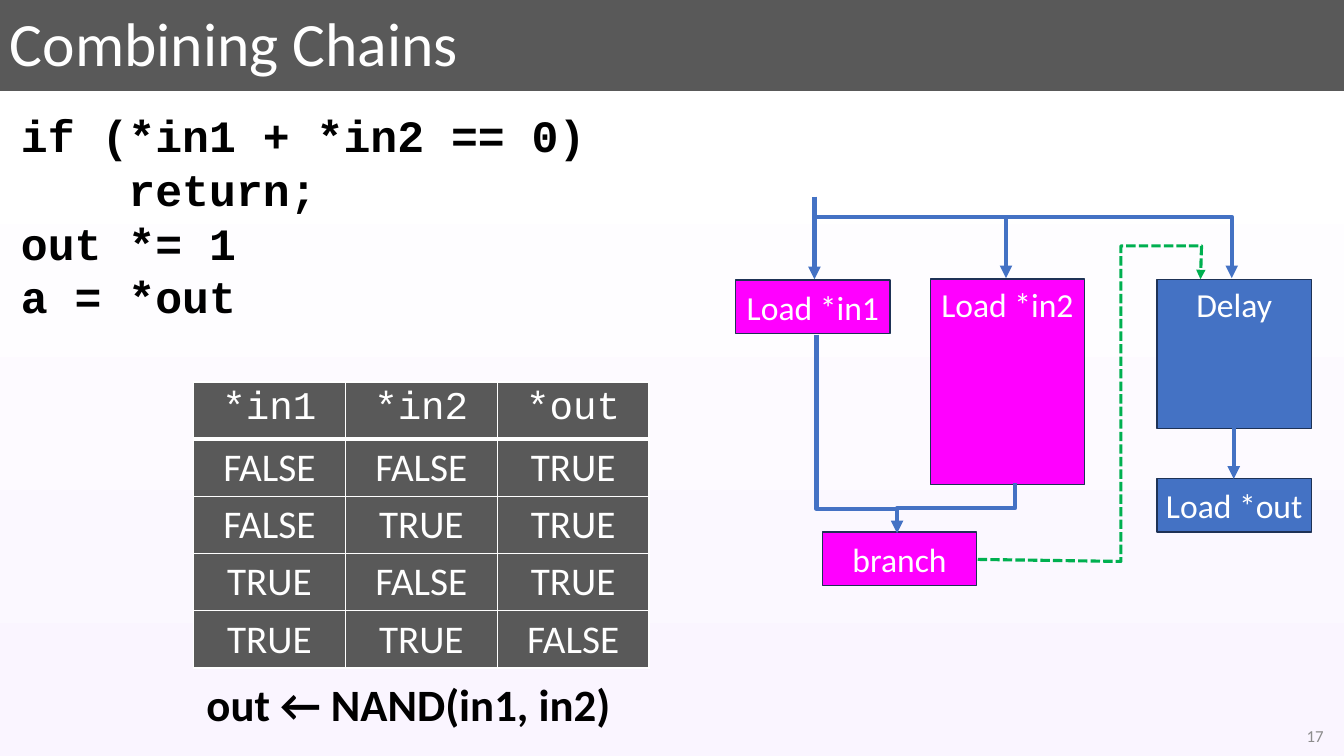
"""Build the "Combining Chains" slide on a grid of 40 columns by 22.5 rows."""
from dataclasses import dataclass

import lxml.etree
import pptx
import pptx.util
import pptx.dml.color
import pptx.enum.dml
import pptx.enum.shapes
import pptx.enum.text
import pptx.oxml.ns

qn = pptx.oxml.ns.qn
RGB = pptx.dml.color.RGBColor.from_string
ALIGN = pptx.enum.text.PP_ALIGN
ANCHOR = pptx.enum.text.MSO_ANCHOR


@dataclass(frozen=True)
class Theme:
    """Colours, fonts and type sizes of the slide."""
    dark: str = "595959"
    white: str = "FFFFFF"
    tint: str = "FAF5FF"
    black: str = "000000"
    grey: str = "8C8C8C"
    load: str = "FF00FF"
    blue: str = "4472C4"
    outline: str = "1E3256"
    green: str = "00B050"
    sans: str = "Calibri"
    mono: str = "Courier New"
    title: int = 44
    body: int = 32
    cell: int = 28
    node: int = 24
    small: int = 12


THEME = Theme()
NODE_WIDTH = 4.59
CODE = "if (*in1 + *in2 == 0)\n    return;\nout *= 1\na = *out"
TRUTH = [
    ("*in1", "*in2", "*out"),
    ("FALSE", "FALSE", "TRUE"),
    ("FALSE", "TRUE", "TRUE"),
    ("TRUE", "FALSE", "TRUE"),
    ("TRUE", "TRUE", "FALSE"),
]


def grid(*cells):
    """Turn grid units, a third of an inch each, into slide lengths."""
    return [pptx.util.Inches(c / 3) for c in cells]


def write(tf, text, size, color, font=THEME.sans, bold=False, align=ALIGN.LEFT):
    """Fill a text frame and format all of its runs."""
    tf.text = text
    for p in tf.paragraphs:
        p.alignment = align
        for r in p.runs:
            r.font.size = pptx.util.Pt(size)
            r.font.name = font
            r.font.bold = bold
            r.font.color.rgb = RGB(color)


def add_background(s):
    """Paint the dark title band and the pale page as one gradient."""
    fill = s.background.fill
    fill.gradient()
    fill.gradient_angle = 270
    stops = s.element.find(".//" + qn("a:gsLst"))
    for stop in list(stops):
        stops.remove(stop)
    for share, color in [(0, THEME.dark), (12, THEME.dark),
                         (12, THEME.white), (100, THEME.tint)]:
        gs = lxml.etree.SubElement(stops, qn("a:gs"), pos=str(share * 1000))
        lxml.etree.SubElement(gs, qn("a:srgbClr"), val=color)


def add_label(s, box, text, size, color, anchor=ANCHOR.TOP, **style):
    """Add a wrapping text box and return its text frame."""
    tf = s.shapes.add_textbox(*grid(*box)).text_frame
    tf.word_wrap = True
    tf.vertical_anchor = anchor
    write(tf, text, size, color, **style)
    return tf


def add_node(s, x, y, height, text, color, anchor=ANCHOR.MIDDLE):
    """Add one operation box of the chain."""
    sp = s.shapes.add_shape(pptx.enum.shapes.MSO_SHAPE.RECTANGLE,
                            *grid(x, y, NODE_WIDTH, height))
    sp.shadow.inherit = False
    sp.fill.solid()
    sp.fill.fore_color.rgb = RGB(color)
    sp.line.color.rgb = RGB(THEME.outline)
    sp.line.width = pptx.util.Pt(1)
    tf = sp.text_frame
    tf.margin_left = tf.margin_right = pptx.util.Inches(0.04)
    tf.word_wrap = True
    tf.vertical_anchor = anchor
    write(tf, text, THEME.node, THEME.white, align=ALIGN.CENTER)


def style_wire(sp, color=THEME.blue, width=3, dash=None, arrow=True):
    """Set the stroke and arrowhead of a wire."""
    sp.line.color.rgb = RGB(color)
    sp.line.width = pptx.util.Pt(width)
    if dash:
        sp.line.dash_style = dash
    spPr = sp.element.spPr
    if arrow:
        lxml.etree.SubElement(spPr.find(qn("a:ln")), qn("a:tailEnd"), type="triangle")
    lxml.etree.SubElement(spPr, qn("a:effectLst"))


def add_straight(s, start, end):
    """Add a straight arrow."""
    sp = s.shapes.add_connector(pptx.enum.shapes.MSO_CONNECTOR.STRAIGHT,
                                *grid(*start, *end))
    style_wire(sp)


def add_bent(s, points, **stroke):
    """Add an open wire through the given points."""
    corners = [grid(*point) for point in points]
    builder = s.shapes.build_freeform(*corners[0])
    builder.add_line_segments(corners[1:], close=False)
    sp = builder.convert_to_shape()
    sp.fill.background()
    style_wire(sp, **stroke)


def add_border(cell, side, width):
    """Draw one white edge of a table cell."""
    ln = lxml.etree.SubElement(cell._tc.get_or_add_tcPr(), qn("a:ln" + side),
                               w=str(pptx.util.Pt(width)))
    fill = lxml.etree.SubElement(ln, qn("a:solidFill"))
    lxml.etree.SubElement(fill, qn("a:srgbClr"), val=THEME.white)


def add_truth_table(s, box):
    """Add the table of inputs and output."""
    table = s.shapes.add_table(len(TRUTH), len(TRUTH[0]), *grid(*box)).table
    table.horz_banding = False
    for i, row in enumerate(TRUTH):
        for j, value in enumerate(row):
            cell = table.cell(i, j)
            for side in "LRTB":
                heavy = (i, side) in [(0, "B"), (1, "T")]
                add_border(cell, side, 3 if heavy else 1)
            cell.fill.solid()
            cell.fill.fore_color.rgb = RGB(THEME.dark)
            write(cell.text_frame, value, THEME.cell, THEME.white,
                  font=THEME.sans if i else THEME.mono, align=ALIGN.CENTER)


def add_chain(s):
    """Add the operation boxes and the wires between them."""
    add_node(s, 21.9, 8.34, 1.59, "Load *in1", THEME.load)
    add_node(s, 27.69, 8.31, 6.12, "Load *in2", THEME.load, ANCHOR.TOP)
    add_node(s, 34.44, 8.31, 4.44, "Delay", THEME.blue, ANCHOR.TOP)
    add_node(s, 34.44, 14.25, 1.59, "Load *out", THEME.blue)
    add_node(s, 24.48, 15.84, 1.59, "branch", THEME.load)
    add_straight(s, (24.24, 5.85), (24.24, 8.31))
    add_straight(s, (36.72, 12.75), (36.72, 14.25))
    for left, right in [(29.94, 36.66), (24.27, 29.94)]:
        add_bent(s, [(left, 6.45), (right, 6.45), (right, 8.28)])
    add_bent(s, [(29.1, 16.65), (33.36, 16.71), (33.36, 7.32), (35.76, 7.32),
                 (35.73, 8.31)], color=THEME.green, width=2.25,
             dash=pptx.enum.dml.MSO_LINE.SQUARE_DOT)
    add_bent(s, [(30.21, 14.37), (30.21, 15.12), (26.7, 15.12), (26.7, 15.87)])
    add_bent(s, [(24.3, 9.96), (24.3, 15.15), (26.7, 15.15)], arrow=False)


def main():
    """Build and save the slide."""
    prs = pptx.Presentation()
    prs.slide_width, prs.slide_height = grid(40, 22.5)
    s = prs.slides.add_slide(prs.slide_layouts[6])
    add_background(s)
    title = add_label(s, (0, 0, 39.69, 2.76), "Combining Chains", THEME.title,
                      THEME.white, ANCHOR.MIDDLE)
    title.paragraphs[0].line_spacing = 0.9
    add_label(s, (30.69, 21.3, 9, 1.2), "17", THEME.small, THEME.grey,
              ANCHOR.MIDDLE, align=ALIGN.RIGHT)
    add_label(s, (0.33, 3.06, 17.88, 6.78), CODE, THEME.body, THEME.black,
              font=THEME.mono, bold=True)
    add_chain(s)
    add_truth_table(s, (5.76, 11.37, 13.56, 8.49))
    add_label(s, (5.76, 19.98, 12.81, 1.92), "out ← NAND(in1, in2)", THEME.body,
              THEME.black, bold=True, align=ALIGN.CENTER)
    prs.save("out.pptx")


if __name__ == "__main__":
    main()
